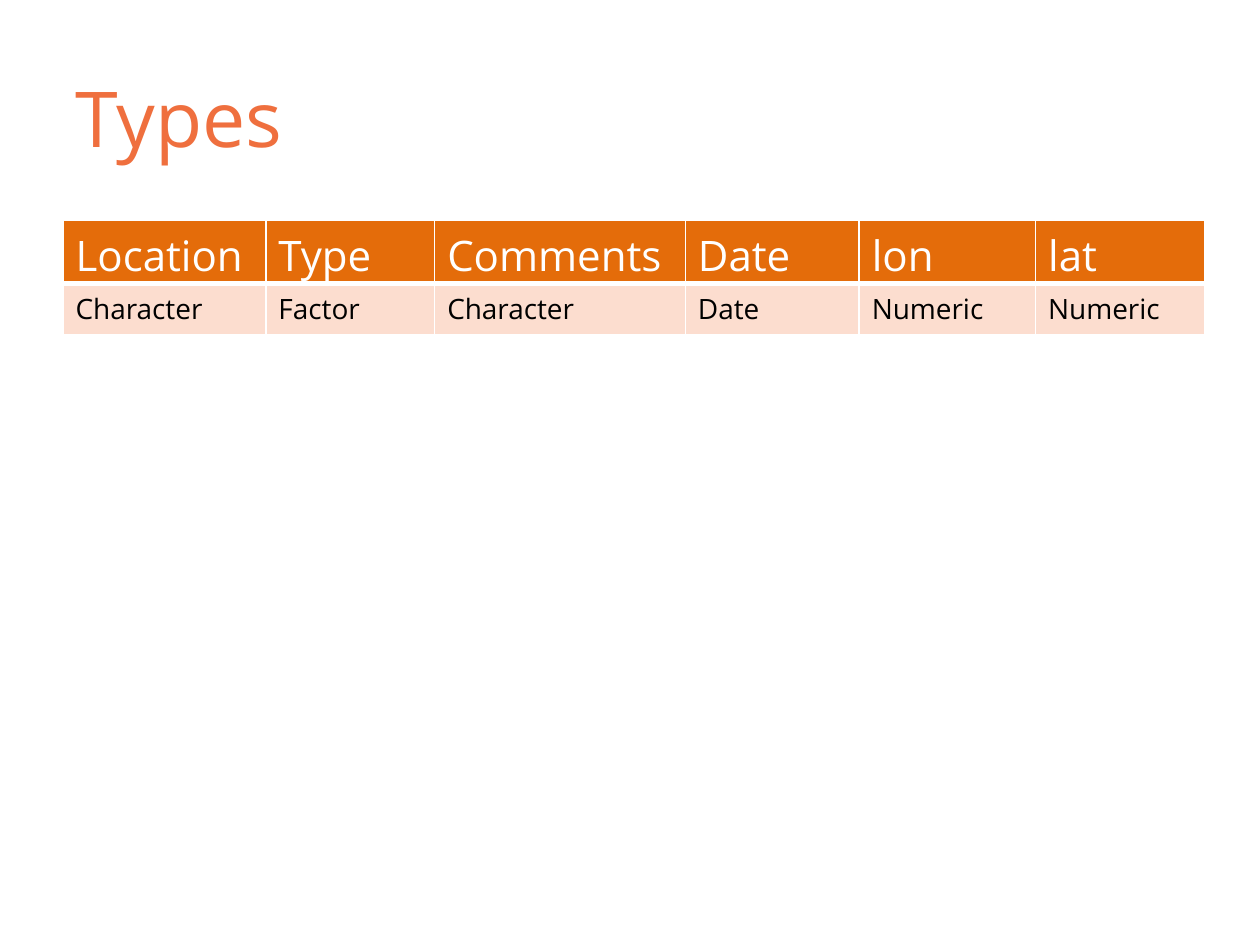
import pptx
import pptx.dml.color
import pptx.enum.text
import pptx.util
from lxml import etree

RGB = pptx.dml.color.RGBColor
Inches, Pt = pptx.util.Inches, pptx.util.Pt

# Content
TITLE = "Types"
ROWS = [
    ["Location", "Type", "Comments", "Date", "lon", "lat"],
    ["Character", "Factor", "Character", "Date", "Numeric", "Numeric"],
]

# Look
FONT = "Open Sans"
CORAL = RGB(0xEF, 0x6F, 0x3E)
ORANGE = RGB(0xE4, 0x6C, 0x0A)
PEACH = RGB(0xFC, 0xDD, 0xCF)
WHITE = RGB(0xFF, 0xFF, 0xFF)
BLACK = RGB(0, 0, 0)
# Per row: text size, text colour, fill, border widths by side
STYLES = [
    (24, WHITE, ORANGE, {"L": 1, "R": 1, "T": 1, "B": 3}),
    (16, BLACK, PEACH, {"L": 1, "R": 1, "T": 3, "B": 1}),
]

# Grid
LEFT, TOP = 0.5, 1.75
COLS = [1.61, 1.34, 1.99, 1.38, 1.4, 1.34]
HIGHS = [0.5, 0.41]


def write(frame, text, size, color):
    run = frame.paragraphs[0].add_run()
    run.text = text
    run.font.name = FONT
    run.font.size = Pt(size)
    run.font.color.rgb = color


def border(cell, sides):
    props = cell._tc.get_or_add_tcPr()
    ns = "{%s}" % props.nsmap["a"]
    for side, width in sides.items():
        line = etree.SubElement(props, ns + "ln" + side, w=str(Pt(width)))
        fill = etree.SubElement(line, ns + "solidFill")
        etree.SubElement(fill, ns + "srgbClr", val=str(WHITE))


deck = pptx.Presentation()
deck.slide_width, deck.slide_height = Inches(10), Inches(7.5)
slide = deck.slides.add_slide(deck.slide_layouts[6])

# Title
box = slide.shapes.add_textbox(Inches(LEFT), Inches(0.3), Inches(9), Inches(1.25))
frame = box.text_frame
frame.word_wrap = True
frame.vertical_anchor = pptx.enum.text.MSO_ANCHOR.MIDDLE
write(frame, TITLE, 44, CORAL)

# Table of column types
table = slide.shapes.add_table(
    len(ROWS), len(COLS), Inches(LEFT), Inches(TOP),
    Inches(sum(COLS)), Inches(sum(HIGHS))).table
for col, width in zip(table.columns, COLS):
    col.width = Inches(width)
for row, high, texts, style in zip(table.rows, HIGHS, ROWS, STYLES):
    row.height = Inches(high)
    size, color, fill, sides = style
    for cell, text in zip(row.cells, texts):
        border(cell, sides)
        cell.fill.solid()
        cell.fill.fore_color.rgb = fill
        write(cell.text_frame, text, size, color)

deck.save("out.pptx")
